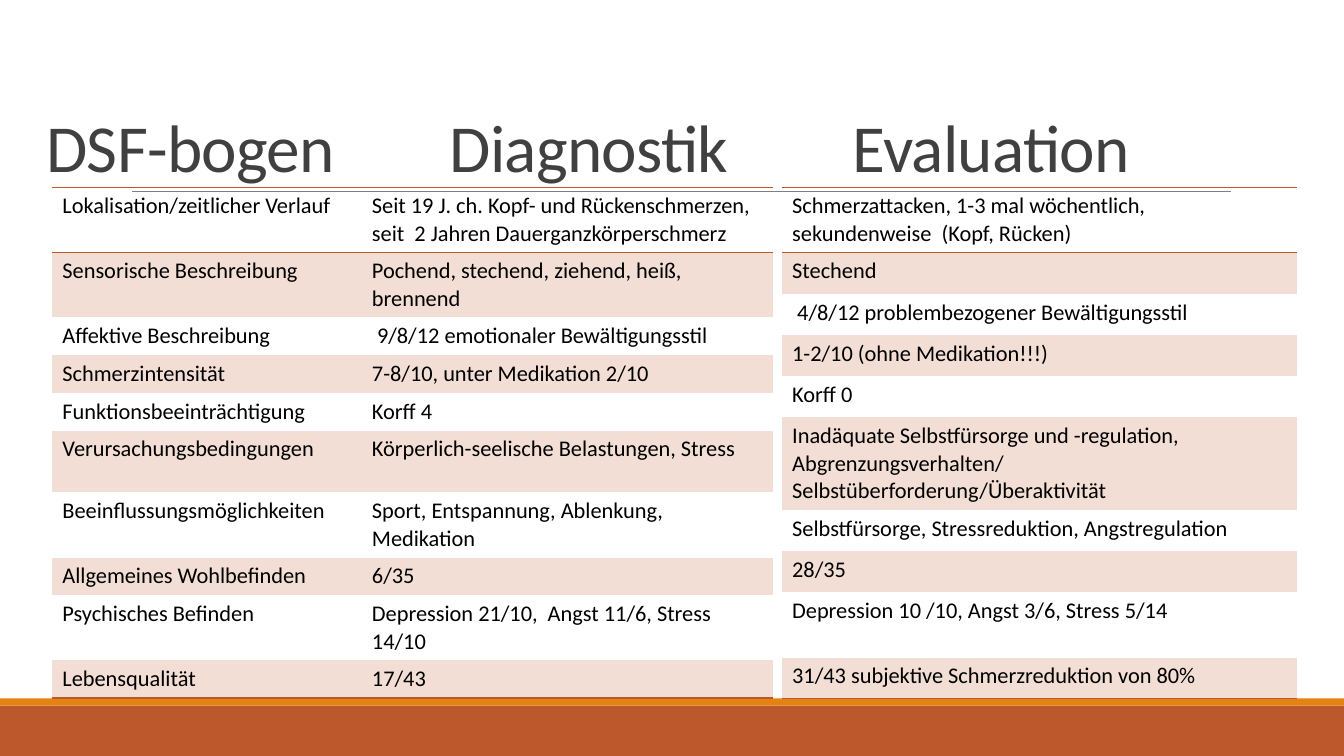
from dataclasses import dataclass

from lxml.etree import SubElement
from pptx import Presentation
from pptx.dml.color import RGBColor
from pptx.enum.shapes import MSO_CONNECTOR as Link, MSO_SHAPE as Shape
from pptx.enum.text import MSO_ANCHOR as Anchor
from pptx.oxml import parse_xml
from pptx.oxml.ns import nsdecls, qn
from pptx.util import Cm, Pt

RUST, AMBER, TINT = "BD582C", "E48312", "F2DED5"
BLACK, DARK, GREY = "000000", "404040", "808080"
WIDE, HIGH = 33.87, 19.05
TOP = 4.72
PLAIN = "{2D5ABB26-0587-4C30-8999-92F81FD0307C}"  # no style, no grid


@dataclass
class Band:
    top: float
    height: float
    color: str


@dataclass
class Grid:
    left: float
    cols: list[float]
    rows: list[tuple]  # height, then one text per column


ONE, TWO, STEP = 0.95, 1.64, 1.04

BANDS = [Band(17.78, 1.27, RUST), Band(17.6, 0.18, AMBER)]

GRIDS = [
    Grid(1.32, [7.8, 10.36], [
        (TWO, "Lokalisation/zeitlicher Verlauf",
         "Seit 19 J. ch. Kopf- und Rückenschmerzen, seit  2 Jahren Dauerganzkörperschmerz"),
        (TWO, "Sensorische Beschreibung", "Pochend, stechend, ziehend, heiß, brennend"),
        (ONE, "Affektive Beschreibung", " 9/8/12 emotionaler Bewältigungsstil"),
        (ONE, "Schmerzintensität", "7-8/10, unter Medikation 2/10"),
        (ONE, "Funktionsbeeinträchtigung", "Korff 4"),
        (1.56, "Verursachungsbedingungen", "Körperlich-seelische Belastungen, Stress"),
        (TWO, "Beeinflussungsmöglichkeiten", "Sport, Entspannung, Ablenkung, Medikation"),
        (ONE, "Allgemeines Wohlbefinden", "6/35"),
        (TWO, "Psychisches Befinden", "Depression 21/10,  Angst 11/6, Stress 14/10"),
        (ONE, "Lebensqualität", "17/43"),
    ]),
    Grid(19.71, [12.98], [
        (TWO, "Schmerzattacken, 1-3 mal wöchentlich, sekundenweise  (Kopf, Rücken)"),
        (STEP, "Stechend"),
        (STEP, " 4/8/12 problembezogener Bewältigungsstil"),
        (STEP, "1-2/10 (ohne Medikation!!!)"),
        (STEP, "Korff 0"),
        (2.33, "Inadäquate Selbstfürsorge und -regulation, "
               "Abgrenzungsverhalten/ Selbstüberforderung/Überaktivität"),
        (STEP, "Selbstfürsorge, Stressreduktion, Angstregulation"),
        (STEP, "28/35"),
        (TWO, "Depression 10 /10, Angst 3/6, Stress 5/14"),
        (STEP, "31/43 subjektive Schmerzreduktion von 80%"),
    ]),
]


def tone(code: str) -> RGBColor:
    return RGBColor.from_string(code)


def write(frame, text: str, *, size: float = 16, color: str = BLACK,
          lead: float = 1.0, track: int = 0, tabs: tuple = ()) -> None:
    """Fill a text frame; track is in 1/100 pt, tabs are in cm."""
    frame.word_wrap = True
    para = frame.paragraphs[0]
    para.line_spacing = lead
    run = para.add_run()
    run.text = text
    font = run.font
    font.name, font.size = "Calibri", Pt(size)
    font.color.rgb = tone(color)
    if track:
        font._element.set("spc", str(track))
    if tabs:
        stops = SubElement(para._p.get_or_add_pPr(), qn("a:tabLst"))
        for tab in tabs:
            SubElement(stops, qn("a:tab"), pos=str(Cm(tab)), algn="l")


def rule(cell, tags: list[str]) -> None:
    """Draw the cell borders named by tags, such as lnT and lnB."""
    props = cell._tc.get_or_add_tcPr()
    for spot, tag in enumerate(tags):
        props.insert(spot, parse_xml(
            f'<a:{tag} {nsdecls("a")} w="{Pt(1)}"><a:solidFill>'
            f'<a:srgbClr val="{RUST}"/></a:solidFill></a:{tag}>'))


def add_band(shapes, band: Band) -> None:
    bar = shapes.add_shape(Shape.RECTANGLE, 0, Cm(band.top), Cm(WIDE), Cm(band.height))
    bar.shadow.inherit = False
    bar.fill.solid()
    bar.fill.fore_color.rgb = tone(band.color)
    bar.line.fill.background()


def add_line(shapes, left: float, right: float, top: float) -> None:
    line = shapes.add_connector(Link.STRAIGHT, Cm(left), Cm(top), Cm(right), Cm(top))
    line.line.color.rgb = tone(GREY)
    line.line.width = Pt(0.5)
    SubElement(line._element.spPr, qn("a:effectLst"))


def add_title(shapes) -> None:
    box = shapes.add_textbox(Cm(0.92), Cm(0.79), Cm(31.5), Cm(4.04))
    box.text_frame.vertical_anchor = Anchor.BOTTOM
    write(box.text_frame, "DSF-bogen\tDiagnostik\tEvaluation", size=48,
          color=DARK, lead=0.85, track=-50, tabs=(10.16, 20.32))


def add_grid(shapes, grid: Grid) -> None:
    count = len(grid.rows)
    table = shapes.add_table(
        count, len(grid.cols), Cm(grid.left), Cm(TOP), Cm(sum(grid.cols)),
        Cm(sum(row[0] for row in grid.rows))).table
    table.first_row = table.horz_banding = False
    table._tbl.tblPr.find(qn("a:tableStyleId")).text = PLAIN
    for col, width in zip(table.columns, grid.cols):
        col.width = Cm(width)
    for i, (height, *texts) in enumerate(grid.rows):
        table.rows[i].height = Cm(height)
        for j, text in enumerate(texts):
            cell = table.cell(i, j)
            write(cell.text_frame, text)
            if i % 2:
                cell.fill.solid()
                cell.fill.fore_color.rgb = tone(TINT)
            else:
                cell.fill.background()
            if i == 0:
                rule(cell, ["lnT", "lnB"])
            elif i == count - 1:
                rule(cell, ["lnB"])


def main() -> None:
    deck = Presentation()
    deck.slide_width, deck.slide_height = Cm(WIDE), Cm(HIGH)
    shapes = deck.slides.add_slide(deck.slide_layouts[6]).shapes
    for band in BANDS:
        add_band(shapes, band)
    add_line(shapes, 3.33, 31.01, 4.83)
    add_title(shapes)
    for grid in GRIDS:
        add_grid(shapes, grid)
    deck.save("out.pptx")


if __name__ == "__main__":
    main()
